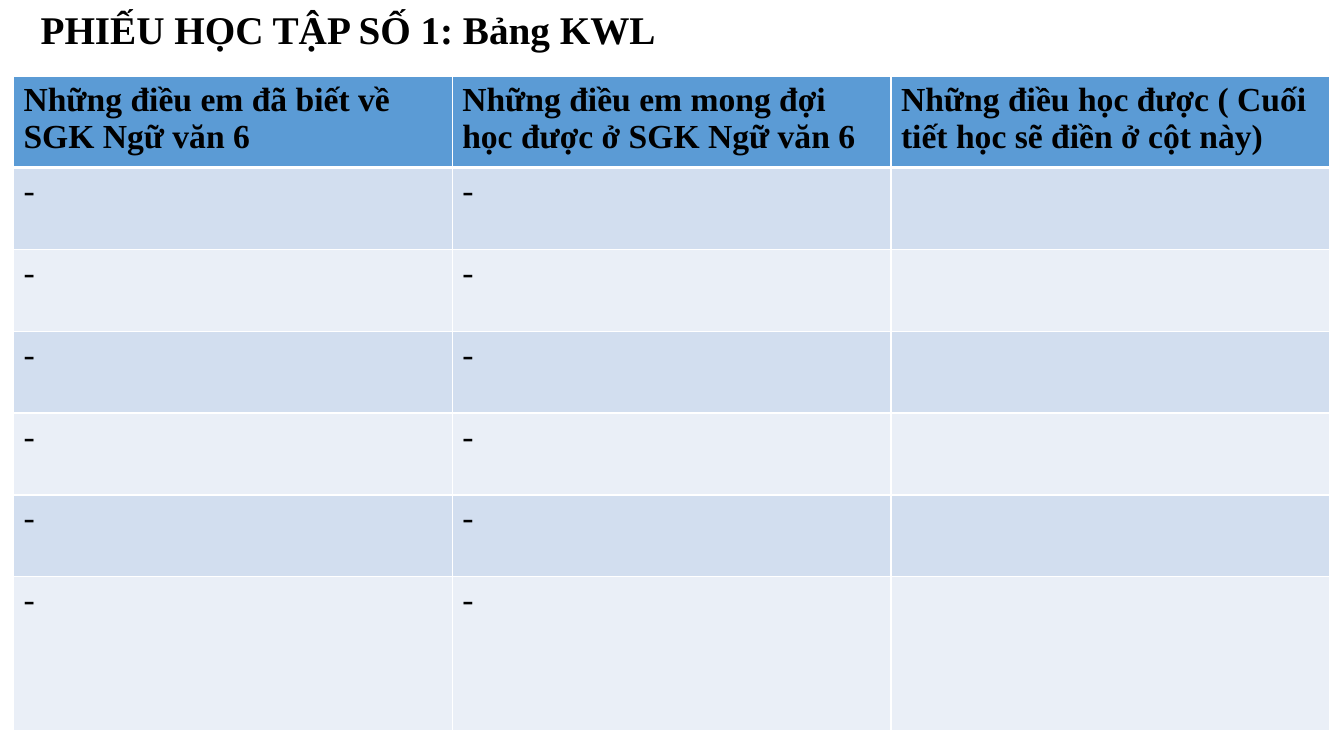
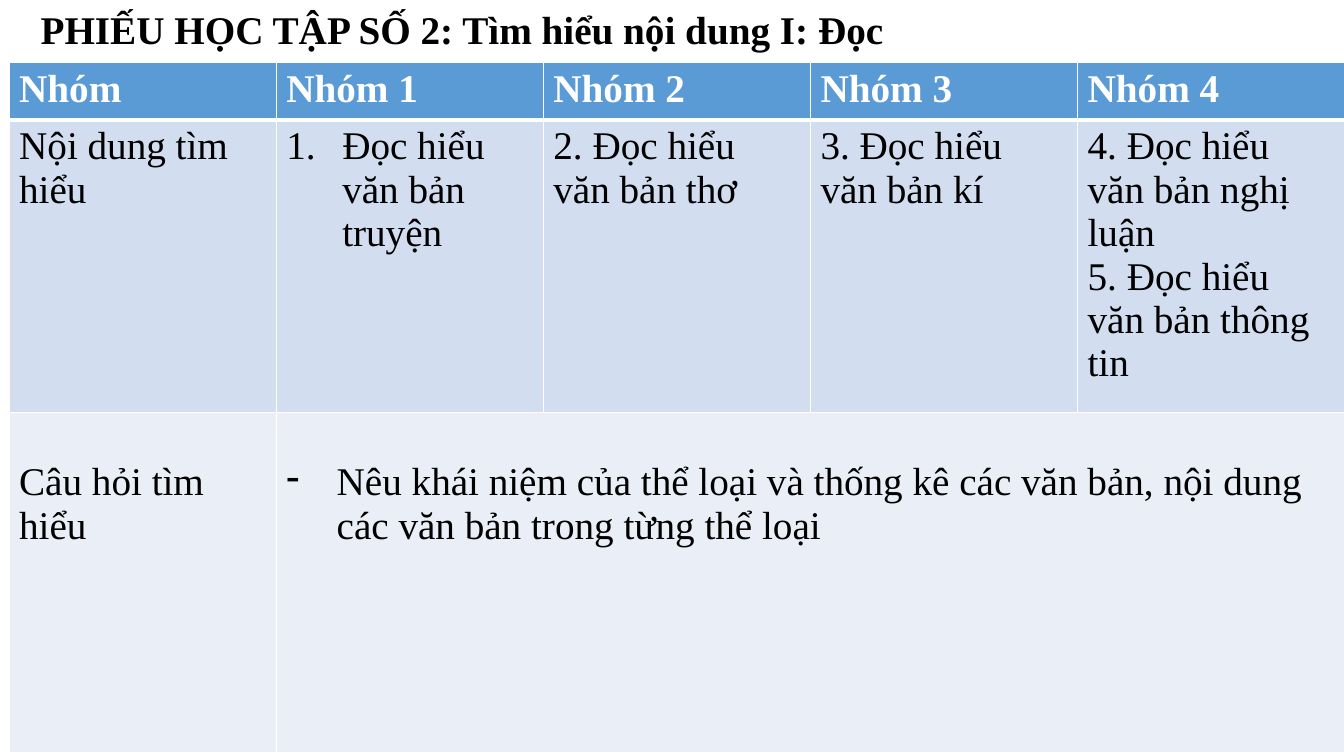
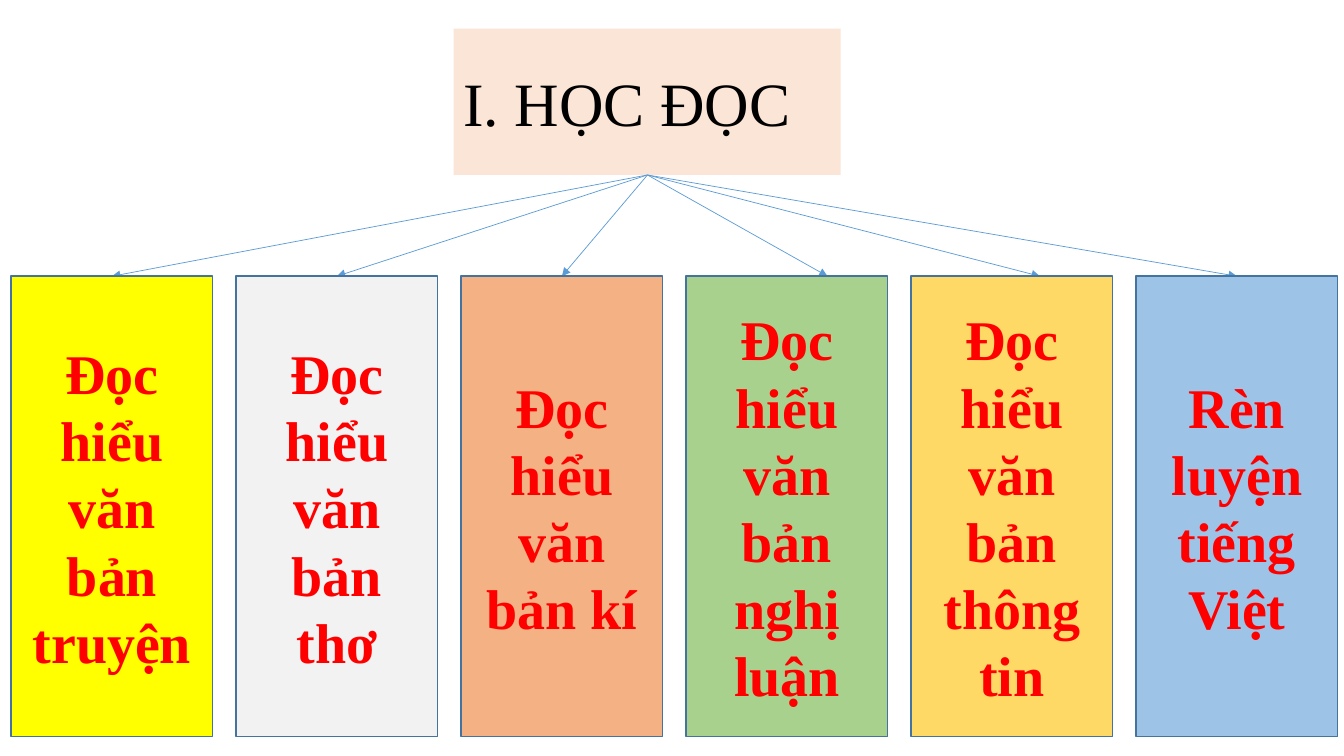
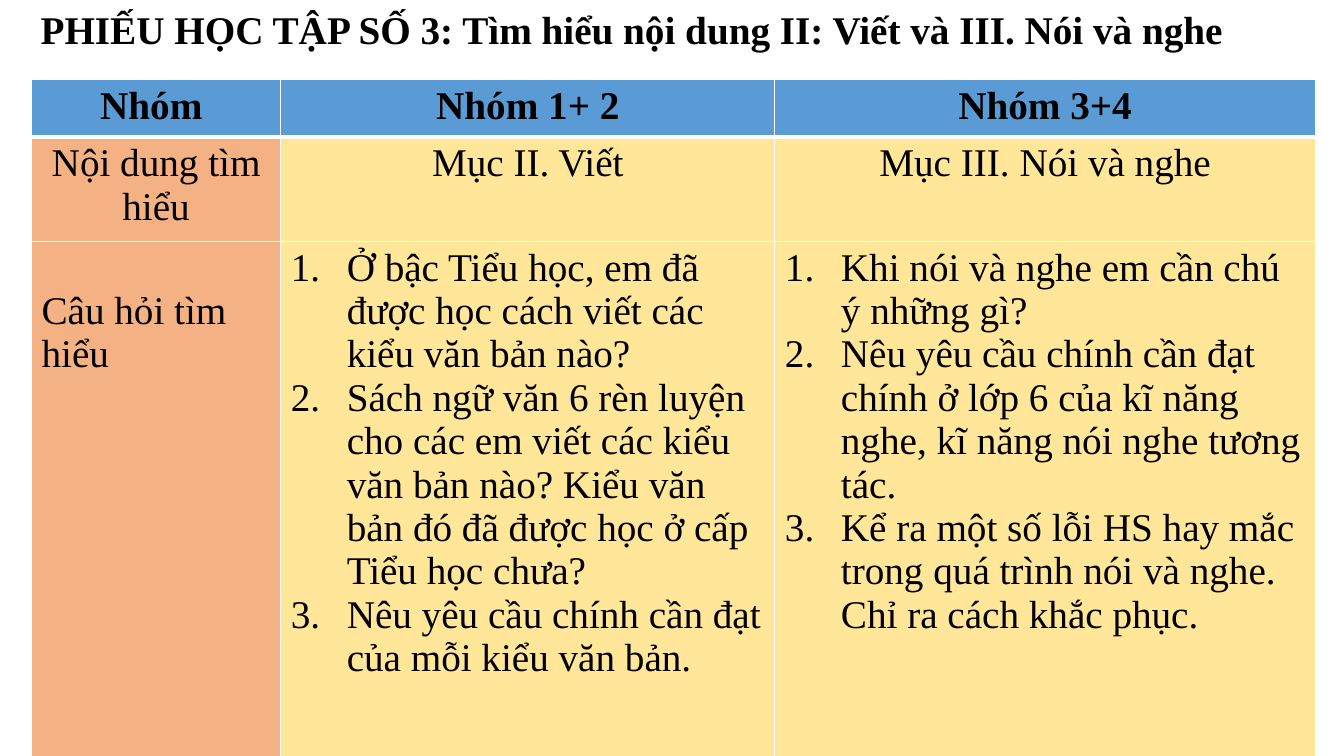
import lxml.etree
import pptx
import pptx.dml.color
import pptx.enum.shapes
import pptx.enum.text
import pptx.oxml.ns
import pptx.util

Pt = pptx.util.Pt
qn = pptx.oxml.ns.qn
ALIGN = pptx.enum.text.PP_ALIGN

COLOURS = {
    "black": "000000", "white": "FFFFFF", "red": "FF0000",
    "blue": "5B9BD5", "outline": "43739E",
    "band_dark": "D2DEEF", "band_light": "EAEFF7",
    "peach": "FBE5D6", "yellow": "FFFF00", "grey": "F2F2F2",
    "orange": "F4B183", "green": "A9D18E", "gold": "FFD966",
    "sky": "9DC3E6", "cream": "FFE699",
}


class Worksheet:
    """Builds the worksheet slides in one shared style."""

    font = "Times New Roman"
    bullets = {
        "numbered": (40, "a:buAutoNum", {"type": "arabicPeriod"}),
        "dashed": (36, "a:buChar", {"char": "-"}),
    }

    def __init__(self):
        self.deck = pptx.Presentation()
        self.deck.slide_width, self.deck.slide_height = Pt(960), Pt(540)
        self.slide = None

    def colour(self, name):
        return pptx.dml.color.RGBColor.from_string(COLOURS[name])

    def fill(self, target, name):
        target.fill.solid()
        target.fill.fore_color.rgb = self.colour(name)

    def new_slide(self):
        self.slide = self.deck.slides.add_slide(self.deck.slide_layouts[6])

    def add_text(self, paragraph, text, size, colour="black", bold=False, align=ALIGN.LEFT):
        paragraph.alignment = align
        run = paragraph.add_run()
        run.text = text
        run.font.name = self.font
        run.font.size = Pt(size)
        run.font.bold = bold
        run.font.color.rgb = self.colour(colour)

    def heading(self, number, topic):
        self.new_slide()
        frame = self.slide.shapes.add_textbox(Pt(22), 0, Pt(892), Pt(41)).text_frame
        frame.word_wrap = True
        self.add_text(frame.paragraphs[0], f"PHIẾU HỌC TẬP SỐ {number}: {topic}", 28, bold=True)

    def box(self, left, top, width, height, fill, text, size, outline=None, **style):
        box = self.slide.shapes.add_shape(
            pptx.enum.shapes.MSO_SHAPE.RECTANGLE, Pt(left), Pt(top), Pt(width), Pt(height))
        box.shadow.inherit = False
        self.fill(box, fill)
        if outline:
            box.line.color.rgb = self.colour(outline)
            box.line.width = Pt(1)
        else:
            box.line.fill.background()
        box.text_frame.word_wrap = True
        box.text_frame.vertical_anchor = pptx.enum.text.MSO_ANCHOR.MIDDLE
        self.add_text(box.text_frame.paragraphs[0], text, size, **style)

    def arrow(self, *ends):
        arrow = self.slide.shapes.add_connector(
            pptx.enum.shapes.MSO_CONNECTOR.STRAIGHT, *map(Pt, ends))
        arrow.line.color.rgb = self.colour("blue")
        arrow.line.width = Pt(0.5)
        properties = arrow.element.spPr
        lxml.etree.SubElement(properties.find(qn("a:ln")), qn("a:tailEnd"), type="triangle")
        lxml.etree.SubElement(properties, qn("a:effectLst"))

    def bullet(self, paragraph, kind):
        indent, tag, attributes = self.bullets[kind]
        properties = paragraph._p.get_or_add_pPr()
        properties.set("marL", str(Pt(indent)))
        properties.set("indent", str(-Pt(indent)))
        lxml.etree.SubElement(properties, qn(tag), attributes)

    def borders(self, cell, row):
        properties = cell._tc.get_or_add_tcPr()
        thick = {0: "a:lnB", 1: "a:lnT"}.get(row)
        for side in ("a:lnL", "a:lnR", "a:lnT", "a:lnB"):
            width = Pt(3 if side == thick else 1)
            line = lxml.etree.SubElement(properties, qn(side), w=str(width))
            solid = lxml.etree.SubElement(line, qn("a:solidFill"))
            lxml.etree.SubElement(solid, qn("a:srgbClr"), val=COLOURS["white"])

    def cell(self, cell, content, size, colour, bold):
        kind, *lines = content if isinstance(content, tuple) else ("plain", content)
        align = ALIGN.CENTER if kind == "centred" else ALIGN.LEFT
        for index, line in enumerate(lines):
            frame = cell.text_frame
            paragraph = frame.add_paragraph() if index else frame.paragraphs[0]
            if line:
                self.add_text(paragraph, line, size, colour, bold, align)
            if kind in self.bullets:
                self.bullet(paragraph, kind)

    def table(self, left, top, widths, heights, rows, fills, size=28, header="black"):
        table = self.slide.shapes.add_table(
            len(rows), len(widths), Pt(left), Pt(top), Pt(sum(widths)), Pt(sum(heights))).table
        for column, width in zip(table.columns, widths):
            column.width = Pt(width)
        for r, contents in enumerate(rows):
            table.rows[r].height = Pt(heights[r])
            for c, content in enumerate(contents):
                cell = table.cell(r, c)
                self.borders(cell, r)
                self.fill(cell, fills(r, c) if r else "blue")
                self.cell(cell, content, size, "black" if r else header, r == 0)
        return table


def banded(row, column):
    return "band_dark" if row % 2 else "band_light"


def by_column(row, column):
    return "cream" if column else "orange"


def main():
    sheet = Worksheet()
    lowered = Pt(34.6)

    sheet.heading(1, "Bảng KWL")
    questions = ("Những điều em đã biết về SGK Ngữ văn 6",
                 "Những điều em mong đợi học được ở SGK Ngữ văn 6",
                 "Những điều học được ( Cuối tiết học sẽ điền ở cột này)")
    sheet.table(9.6, 54.8, [313.4] * 3, [64] + [58.5] * 5 + [110],
                [questions] + [("-", "-", "")] * 6, banded, size=24)

    sheet.heading(2, "Tìm hiểu nội dung I: Đọc")
    reading = sheet.table(6.5, 44.8, [190.8] * 5, [40.5, 208.5, 243], [
        ["Nhóm"] + [f"Nhóm {group}" for group in range(1, 5)],
        ["Nội dung tìm hiểu",
         ("numbered", "Đọc hiểu văn bản truyện"),
         "2. Đọc hiểu văn bản thơ",
         "3. Đọc hiểu văn bản kí",
         ("plain", "4. Đọc hiểu văn bản nghị luận", "5. Đọc hiểu văn bản thông tin")],
        ["Câu hỏi tìm hiểu",
         ("dashed", "Nêu khái niệm của thể loại và thống kê các văn bản, "
                    "nội dung các văn bản trong từng thể loại"),
         "", "", ""],
    ], banded, header="white")
    reading.cell(2, 1).merge(reading.cell(2, 4))
    for column in (0, 1):
        reading.cell(2, column).margin_top = lowered

    sheet.new_slide()
    sheet.box(324, 20.5, 276.5, 104.5, "peach", "I. HỌC ĐỌC", 44)
    branches = (
        ("Đọc hiểu văn bản truyện", "yellow", 0),
        ("Đọc hiểu văn bản thơ", "grey", 0),
        ("Đọc hiểu văn bản kí", "orange", 0),
        ("Đọc hiểu văn bản nghị luận", "green", 29),
        ("Đọc hiểu văn bản thông tin", "gold", 20),
        ("Rèn luyện tiếng Việt", "sky", 0),
    )
    width, step, top = 144, 160.7, 197.3
    for index, (skill, fill, shift) in enumerate(branches):
        left = 8 + index * step
        sheet.arrow(462.5, 125, left + width / 2 + shift, top)
        sheet.box(left, top, width, 329, fill, skill, 40, outline="outline",
                  colour="red", bold=True, align=ALIGN.CENTER)

    sheet.heading(3, "Tìm hiểu nội dung II: Viết và III. Nói và nghe")
    writing = sheet.table(22.5, 57, [178, 353, 386], [40.5, 74, 377], [
        [("centred", group) for group in ("Nhóm ", "Nhóm 1+ 2", "Nhóm 3+4")],
        [("centred", part) for part in
         ("Nội dung tìm hiểu", "Mục II. Viết", "Mục III. Nói và nghe")],
        ["Câu hỏi tìm hiểu",
         ("numbered",
          "Ở bậc Tiểu học, em đã được học cách viết các kiểu văn bản nào?",
          "Sách ngữ văn 6 rèn luyện cho các em viết các kiểu văn bản nào? "
          "Kiểu văn bản đó đã được học ở cấp Tiểu học chưa?",
          "Nêu yêu cầu chính cần đạt của mỗi kiểu văn bản."),
         ("numbered",
          "Khi nói và nghe em cần chú ý những gì?",
          "Nêu yêu cầu chính cần đạt chính ở lớp 6 của kĩ năng nghe, "
          "kĩ năng nói nghe tương tác.",
          "Kể ra một số lỗi HS hay mắc trong quá trình nói và nghe. "
          "Chỉ ra cách khắc phục.")],
    ], by_column)
    writing.cell(2, 0).margin_top = lowered

    sheet.deck.save("out.pptx")


if __name__ == "__main__":
    main()
